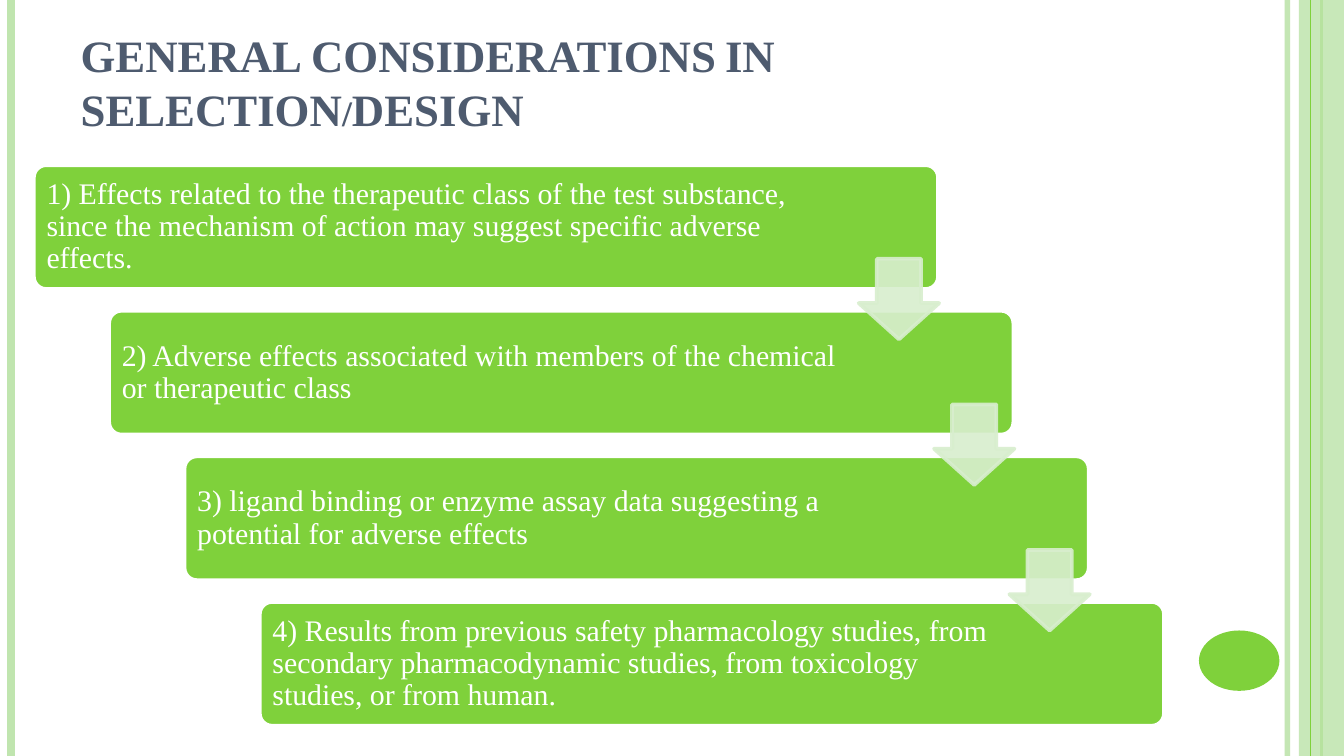
from lxml import etree
from pptx import Presentation
from pptx.dml.color import RGBColor
from pptx.enum.shapes import MSO_CONNECTOR, MSO_SHAPE
from pptx.enum.text import MSO_ANCHOR, MSO_AUTO_SIZE, PP_ALIGN
from pptx.oxml.ns import qn
from pptx.util import Cm, Pt

STRAIGHT = MSO_CONNECTOR.STRAIGHT
RECTANGLE, OVAL = MSO_SHAPE.RECTANGLE, MSO_SHAPE.OVAL
ROUNDED, DOWN_ARROW = MSO_SHAPE.ROUNDED_RECTANGLE, MSO_SHAPE.DOWN_ARROW
MIDDLE, BOTTOM = MSO_ANCHOR.MIDDLE, MSO_ANCHOR.BOTTOM
LEFT, NO_FIT = PP_ALIGN.LEFT, MSO_AUTO_SIZE.NONE

WIDTH, HEIGHT = 25.4, 14.28
FONT = "Times New Roman"
GREEN, PALE_GREEN, ARROW_GREEN = "7FD13B", "C0E5AF", "D8EECE"
SLATE, WHITE = "4E5B6F", "FFFFFF"

TITLE = "GENERAL CONSIDERATIONS IN SELECTION/DESIGN"
STEPS = [
    "1) Effects related to the therapeutic class of the test substance, since the "
    "mechanism of action may suggest specific adverse effects.",
    "2) Adverse effects associated with members of the chemical or therapeutic class",
    "3) ligand binding or enzyme assay data suggesting a potential for adverse effects",
    "4) Results from previous safety pharmacology studies, from secondary "
    "pharmacodynamic studies, from toxicology studies, or from human.",
]


def paint(color_format, color, opacity=100):
    """Set a colour from a hex string, with an opacity in percent."""
    color_format.rgb = RGBColor.from_string(color)
    if opacity < 100:
        for value in color_format._xFill.iter(qn("a:srgbClr")):
            etree.SubElement(value, qn("a:alpha")).set("val", str(opacity * 1000))


def add_shape(page, kind, box, fill, opacity=100, outline=None):
    """Add a filled preset shape, with a 2 pt outline if a colour is given."""
    shape = page.shapes.add_shape(kind, *map(Cm, box))
    shape.shadow.inherit = False
    shape.fill.solid()
    paint(shape.fill.fore_color, fill, opacity)
    if outline:
        shape.line.width = Pt(2)
        paint(shape.line.color, outline, opacity)
    else:
        shape.line.fill.background()
    return shape


def add_rule(page, x, color, weight, opacity=100):
    """Add a vertical line over the full page height."""
    rule = page.shapes.add_connector(STRAIGHT, Cm(x), Cm(0), Cm(x), Cm(HEIGHT))
    rule.line.width = Pt(weight)
    paint(rule.line.color, color, opacity)
    etree.SubElement(rule._element.spPr, qn("a:effectLst"))


def add_frame(page):
    """Add the side rules, the right band and the page disc."""
    add_rule(page, 24.33, PALE_GREEN, 3, 93)
    add_rule(page, 0.21, PALE_GREEN, 4.5)
    add_rule(page, 24.97, GREEN, 1.5)
    add_shape(page, RECTANGLE, (24.55, 0, 0.85, HEIGHT), PALE_GREEN, 87)
    add_rule(page, 24.77, GREEN, 0.75)
    add_shape(page, OVAL, (22.66, 11.91, 1.52, 1.14), GREEN)


def format_text(para, size, color):
    """Set alignment, font, size and colour of a paragraph."""
    para.alignment = LEFT
    para.font.name = FONT
    para.font.size = Pt(size)
    para.font.color.rgb = RGBColor.from_string(color)


def add_title(page, box):
    """Fill the title placeholder and move it to the box."""
    title = page.shapes.title
    title.left, title.top, title.width, title.height = map(Cm, box)
    frame = title.text_frame
    frame.text = TITLE
    frame.word_wrap = True
    frame.auto_size = NO_FIT
    frame.vertical_anchor = BOTTOM
    para = frame.paragraphs[0]
    format_text(para, 24, SLATE)
    para.font.bold = True
    para._p.pPr.find(qn("a:defRPr")).set("cap", "small")


def add_step(page, box, text, text_width):
    """Add a rounded panel with its text in a box inside it."""
    left, top, width, height = box
    panel = add_shape(page, ROUNDED, box, GREEN, outline=WHITE)
    panel.adjustments[0] = 0.1
    label = page.shapes.add_textbox(
        Cm(left + 0.07), Cm(top + 0.07), Cm(text_width), Cm(height - 0.14))
    frame = label.text_frame
    frame.word_wrap = True
    frame.vertical_anchor = MIDDLE
    frame.margin_left = frame.margin_right = Cm(0.17)
    frame.margin_top = frame.margin_bottom = Cm(0.17)
    para = frame.paragraphs[0]
    para.text = text
    para.line_spacing = 0.9
    format_text(para, 16, WHITE)


def add_staircase(page, box):
    """Add the descending steps and the arrows between them."""
    left, top, width, height = box
    step_width, step_height, arrow_size = 17.09, 2.34, 1.52
    last = len(STEPS) - 1
    shift = (width - step_width) / last
    drop = (height - step_height) / last
    for index, text in enumerate(STEPS):
        step = (left + index * shift, top + index * drop, step_width, step_height)
        add_step(page, step, text, 14.03 if index else 14.4)
    for index in range(last):
        place = (left + 15.59 + index * shift, top + 1.77 + index * drop)
        arrow = add_shape(page, DOWN_ARROW, (*place, arrow_size, arrow_size),
                          ARROW_GREEN, 90, ARROW_GREEN)
        arrow.adjustments[0] = 0.55
        arrow.adjustments[1] = 0.45


def main():
    """Build the deck and save it."""
    deck = Presentation()
    deck.slide_width, deck.slide_height = Cm(WIDTH), Cm(HEIGHT)
    page = deck.slides.add_slide(deck.slide_layouts[5])
    add_frame(page)
    add_title(page, (1.27, 0.3, 22.02, 2.39))
    add_staircase(page, (0.64, 3.12, 21.36, 10.59))
    deck.save("out.pptx")


if __name__ == "__main__":
    main()
